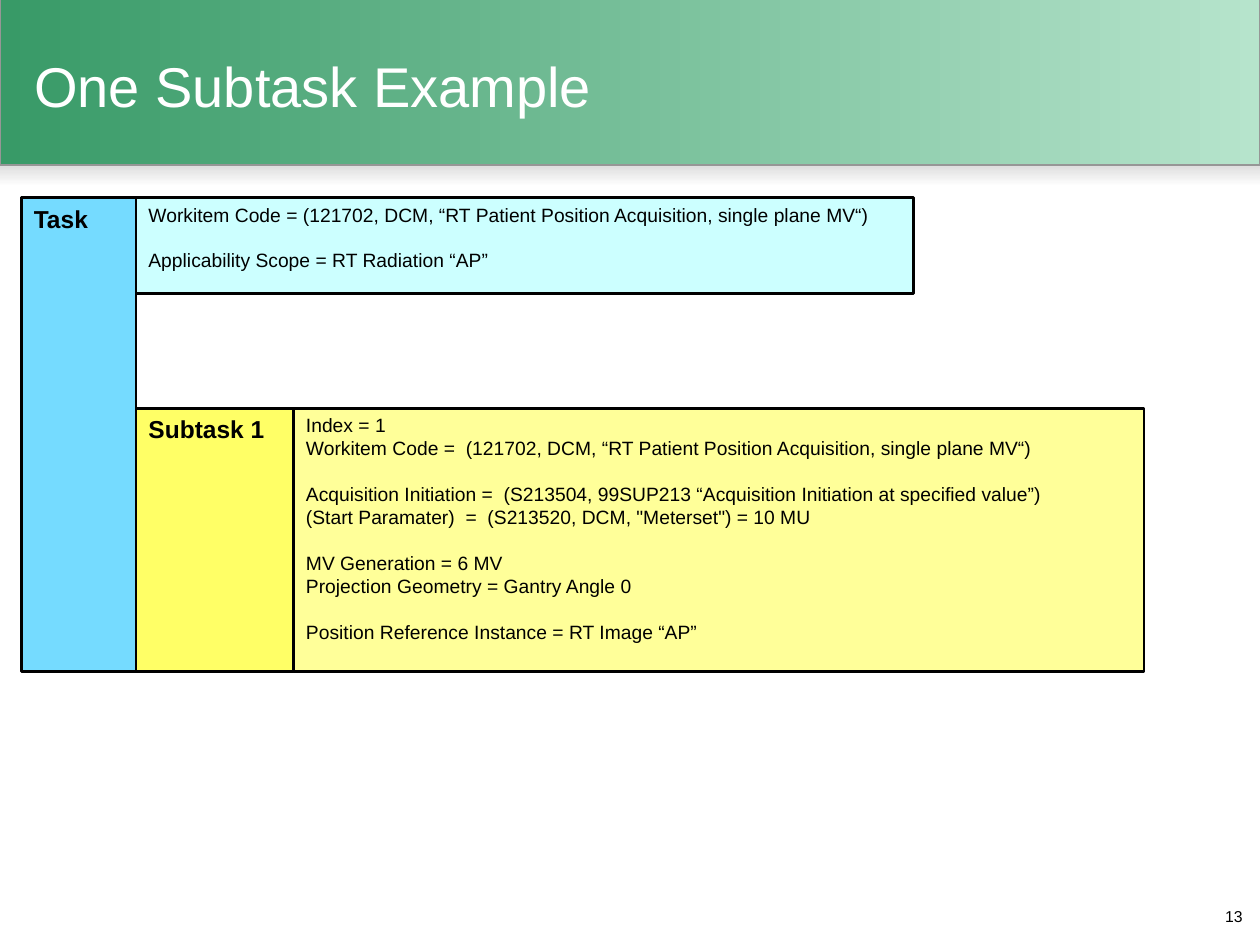
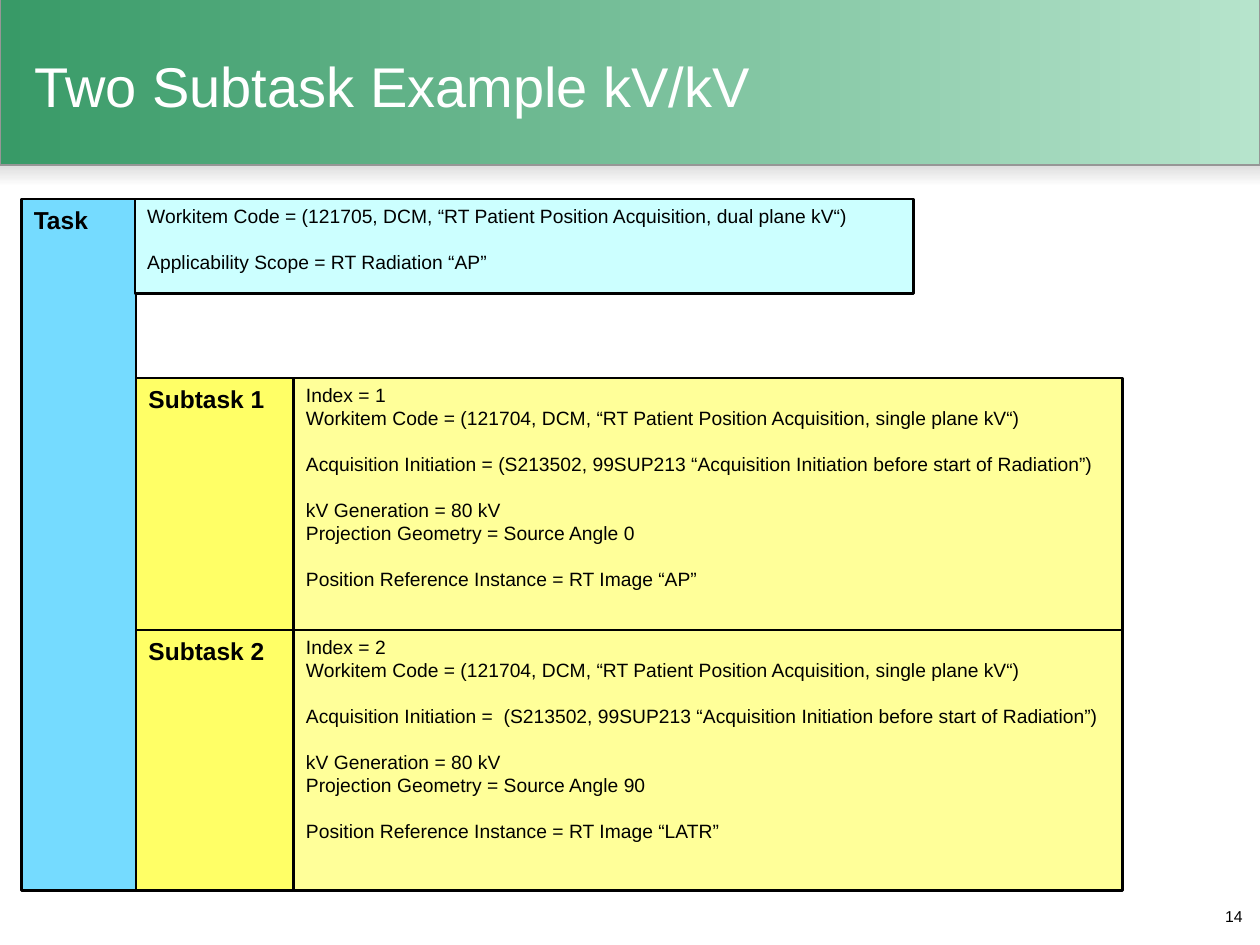
"""Build two slides that show a task and its subtasks as nested boxes."""
from pptx import Presentation
from pptx.dml.color import RGBColor
from pptx.enum.shapes import MSO_SHAPE
from pptx.enum.text import MSO_ANCHOR, PP_ALIGN
from pptx.util import Inches, Pt

RECT = MSO_SHAPE.RECTANGLE
TOP, MIDDLE = MSO_ANCHOR.TOP, MSO_ANCHOR.MIDDLE
LEFT, RIGHT = PP_ALIGN.LEFT, PP_ALIGN.RIGHT

BLACK = RGBColor(0x00, 0x00, 0x00)
WHITE = RGBColor(0xFF, 0xFF, 0xFF)
GRAY = RGBColor(0x96, 0x96, 0x96)
SILVER = RGBColor(0xDD, 0xDD, 0xDD)
GREEN = RGBColor(0x38, 0x9A, 0x67)
MINT = RGBColor(0xB6, 0xE4, 0xCC)
BLUE = RGBColor(0x75, 0xDB, 0xFF)
CYAN = RGBColor(0xCC, 0xFF, 0xFF)
YELLOW = RGBColor(0xFF, 0xFF, 0x66)
CREAM = RGBColor(0xFF, 0xFF, 0x99)

BANDS = [
    ((0, 1.31, 10, 0.17), (SILVER, WHITE), 270, None),
    ((0, -0.02, 10, 1.33), (GREEN, MINT), 0, GRAY),
]
TITLE = {"size": Pt(32), "name": "Arial", "color": WHITE}
LABEL = {"size": Pt(14), "name": "Arial", "bold": True, "color": BLACK}
DETAIL = {"size": Pt(11), "name": "Arial", "color": BLACK}
NUMBER = {"size": Pt(9), "name": "Arial", "color": BLACK}
GAP = Pt(13)

TASK_X, SUB_X, TEXT_X = 0.17, 1.08, 2.33
SCOPE_END, SCOPE_BASE = 7.25, 2.33

SLIDES = [
    {
        "title": "One Subtask Example",
        "number": "13",
        "top": 1.57,
        "scope_x": 1.08,
        "end": 9.08,
        "rows": [3.24, 5.33],
        "scope": [
            ["Workitem Code = (121702, DCM, “RT Patient Position Acquisition, single plane MV“)"],
            ["Applicability Scope = RT Radiation “AP”"],
        ],
        "subtasks": [
            [
                ["Index = 1",
                 "Workitem Code =  (121702, DCM, “RT Patient Position Acquisition, single plane MV“)"],
                ["Acquisition Initiation =  (S213504, 99SUP213 “Acquisition Initiation at specified value”)",
                 "(Start Paramater)  =  (S213520, DCM, \"Meterset\") = 10 MU"],
                ["MV Generation = 6 MV", "Projection Geometry = Gantry Angle 0"],
                ["Position Reference Instance = RT Image “AP”"],
            ],
        ],
    },
    {
        "title": "Two Subtask Example kV/kV",
        "number": "14",
        "top": 1.58,
        "scope_x": 1.07,
        "end": 8.91,
        "rows": [3, 5, 7.07],
        "scope": [
            ["Workitem Code = (121705, DCM, “RT Patient Position Acquisition, dual plane kV“)"],
            ["Applicability Scope = RT Radiation “AP”"],
        ],
        "subtasks": [
            [
                ["Index = 1",
                 "Workitem Code = (121704, DCM, “RT Patient Position Acquisition, single plane kV“)"],
                ["Acquisition Initiation = (S213502, 99SUP213 “Acquisition Initiation before start of Radiation”)"],
                ["kV Generation = 80 kV", "Projection Geometry = Source Angle 0"],
                ["Position Reference Instance = RT Image “AP”"],
            ],
            [
                ["Index = 2",
                 "Workitem Code = (121704, DCM, “RT Patient Position Acquisition, single plane kV“)"],
                ["Acquisition Initiation =  (S213502, 99SUP213 “Acquisition Initiation before start of Radiation”)"],
                ["kV Generation = 80 kV", "Projection Geometry = Source Angle 90"],
                ["Position Reference Instance = RT Image “LATR”"],
            ],
        ],
    },
]


def style(font, form):
    """Apply a dict of format values to a font."""
    for key, value in form.items():
        if key == "color":
            font.color.rgb = value
        else:
            setattr(font, key, value)


def write(frame, groups, form, align=LEFT, anchor=TOP):
    """Write groups of lines, with a gap before each later group."""
    frame.word_wrap = True
    frame.vertical_anchor = anchor
    lines = [(text, num > 0 and pos == 0)
             for num, group in enumerate(groups)
             for pos, text in enumerate(group)]
    for num, (text, gap) in enumerate(lines):
        para = frame.add_paragraph() if num else frame.paragraphs[0]
        para.alignment = align
        if gap:
            para.space_before = GAP
        run = para.add_run()
        run.text = text
        style(run.font, form)


def add_rect(slide, place):
    """Add a rectangle without a shadow."""
    shape = slide.shapes.add_shape(RECT, *map(Inches, place))
    shape.shadow.inherit = False
    return shape


def add_box(slide, edges, fill, groups, form, inset=0.05):
    """Add an outlined box between left, top, right and bottom edges."""
    left, top, right, base = edges
    box = add_rect(slide, (left, top, right - left, base - top))
    box.fill.solid()
    box.fill.fore_color.rgb = fill
    box.line.color.rgb = BLACK
    box.line.width = Pt(1.5)
    box.text_frame.margin_top = Inches(inset)
    write(box.text_frame, groups, form)


def add_bands(slide):
    """Put the gradient bands on the layout that all slides share."""
    head = slide.slide_layout.placeholders[0].element
    for place, colors, angle, edge in BANDS:
        band = add_rect(slide, place)
        band.fill.gradient()
        band.fill.gradient_angle = angle
        for stop, color in zip(band.fill.gradient_stops, colors):
            stop.color.rgb = color
        if edge:
            band.line.color.rgb = edge
            band.line.width = Pt(0.75)
        else:
            band.line.fill.background()
        head.addprevious(band.element)


def fill_slide(slide, data):
    """Fill one slide with its title, number and boxes."""
    title = slide.shapes.title
    title.left, title.top, title.width, title.height = map(
        Inches, (0.17, 0.14, 6.75, 1.07))
    write(title.text_frame, [[data["title"]]], TITLE, anchor=MIDDLE)
    number = slide.shapes.add_textbox(*map(Inches, (9.37, 7.15, 0.59, 0.34)))
    write(number.text_frame, [[data["number"]]], NUMBER, RIGHT)

    top, rows = data["top"], data["rows"]
    add_box(slide, (TASK_X, top, SUB_X, rows[-1]), BLUE, [["Task"]], LABEL)
    add_box(slide, (data["scope_x"], top, SCOPE_END, SCOPE_BASE),
            CYAN, data["scope"], DETAIL, 0.04)
    spans = zip(rows, rows[1:], data["subtasks"])
    for num, (start, stop, groups) in enumerate(spans, 1):
        add_box(slide, (SUB_X, start, TEXT_X, stop),
                YELLOW, [[f"Subtask {num}"]], LABEL)
        add_box(slide, (TEXT_X, start, data["end"], stop),
                CREAM, groups, DETAIL, 0.04)


def main():
    """Build and save the deck."""
    deck = Presentation()
    deck.slide_width, deck.slide_height = Inches(10), Inches(7.5)
    layout = deck.slide_layouts[5]
    for num, data in enumerate(SLIDES):
        slide = deck.slides.add_slide(layout)
        if num == 0:
            add_bands(slide)
        fill_slide(slide, data)
    deck.save("out.pptx")


if __name__ == "__main__":
    main()
